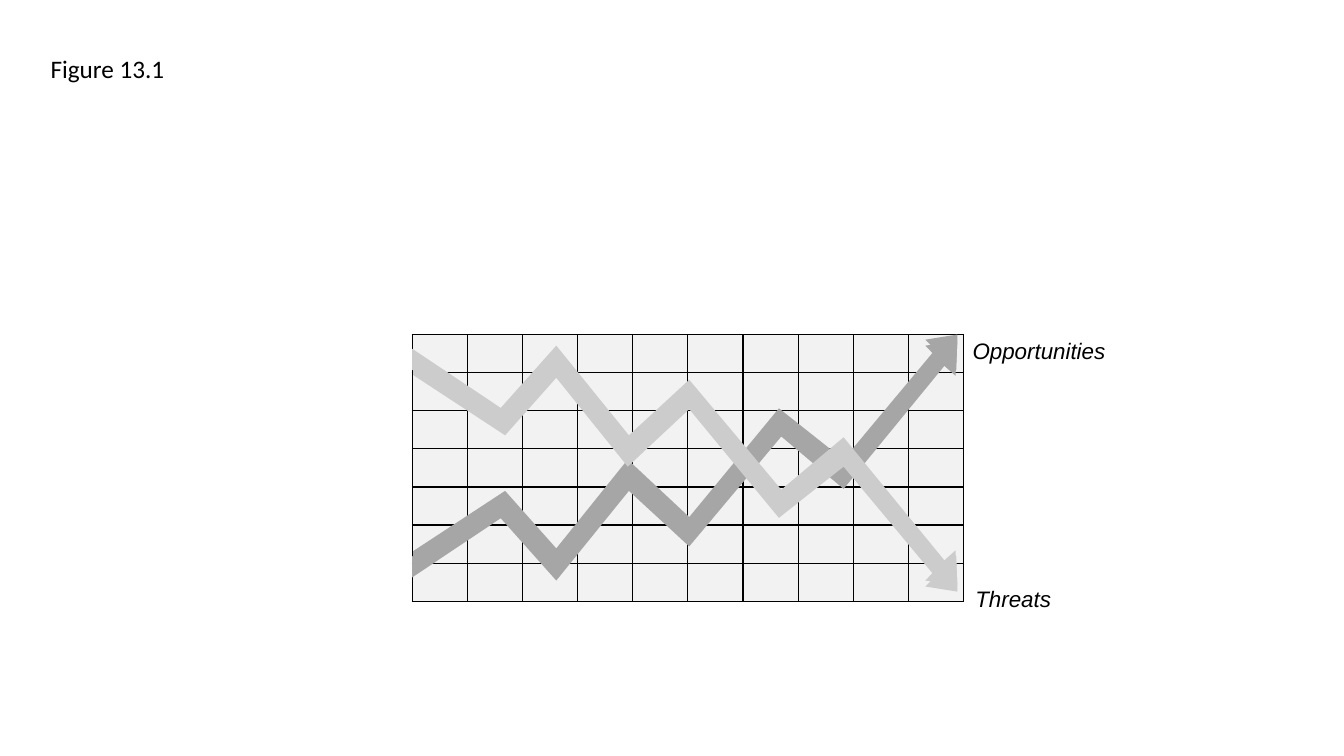
from lxml import etree
from pptx import Presentation
from pptx.dml.color import RGBColor
from pptx.enum.text import MSO_ANCHOR, MSO_AUTO_SIZE, PP_ALIGN
from pptx.oxml.ns import qn
from pptx.util import Cm, Pt

LEFT = PP_ALIGN.LEFT
TOP = MSO_ANCHOR.TOP
GROW = MSO_AUTO_SIZE.SHAPE_TO_FIT_TEXT

TITLE_ONLY = 5
BLACK, GRID_FILL = "000000", "F2F2F2"
OPPORTUNITY_GREY, THREAT_GREY = "A6A6A6", "CCCCCC"

GRID_LEFT, GRID_TOP = 10.39, 8.43
COLUMNS, COLUMN_WIDTH = 10, 1.39
ROWS, ROW_HEIGHT = 7, 0.96

# The threats mirror the opportunities: both heights add up to this sum
MIRROR_SUM = 23.34

# Outlines of the two overlapping rising arrows, in centimetres
RISING_ARROWS = [
    [(10.39, 14.02), (12.73, 12.5), (14.02, 13.97), (15.8, 11.76),
     (17.35, 13.18), (19.61, 10.41), (21.23, 11.76), (23.57, 8.97),
     (23.32, 8.71), (24.13, 8.59), (24.08, 9.47), (23.8, 9.22),
     (21.26, 12.32), (19.69, 11), (17.37, 13.77), (15.85, 12.37),
     (14.02, 14.63), (12.62, 13.06), (10.39, 14.55)],
    [(10.41, 13.89), (12.73, 12.37), (14.02, 13.82), (15.82, 11.58),
     (17.37, 13.03), (19.63, 10.29), (21.26, 11.58), (23.57, 8.81),
     (23.32, 8.56), (24.13, 8.43), (24.1, 9.32), (23.85, 9.07),
     (21.26, 12.17), (19.69, 10.85), (17.37, 13.64), (15.88, 12.24),
     (14.02, 14.5), (12.62, 12.9), (10.41, 14.4)],
]

LABEL_FORMAT = {"name": "Arial", "size": Pt(16), "italic": True}
TITLE_FORMAT = {"name": "Calibri", "size": Pt(18)}


def colour(hex_string):
    return RGBColor.from_string(hex_string)


def fill_solid(target, hex_string):
    target.fill.solid()
    target.fill.fore_color.rgb = colour(hex_string)


def write_text(box, text, font_format):
    frame = box.text_frame
    frame_format = {"word_wrap": False, "auto_size": GROW,
                    "vertical_anchor": TOP}
    for name, value in frame_format.items():
        setattr(frame, name, value)
    para = frame.paragraphs[0]
    para.alignment = LEFT
    span = para.add_run()
    span.text = text
    for name, value in font_format.items():
        setattr(span.font, name, value)
    span.font.color.rgb = colour(BLACK)


def place(box, left, top, width, height):
    box.left, box.top = Cm(left), Cm(top)
    box.width, box.height = Cm(width), Cm(height)


def add_label(page, text, left, top, width, height):
    box = page.shapes.add_textbox(Cm(left), Cm(top), Cm(width), Cm(height))
    write_text(box, text, LABEL_FORMAT)


def add_borders(cell):
    properties = cell._tc.get_or_add_tcPr()
    for side in ("a:lnL", "a:lnR", "a:lnT", "a:lnB"):
        line = etree.SubElement(properties, qn(side), w=str(Pt(1)))
        fill = etree.SubElement(line, qn("a:solidFill"))
        etree.SubElement(fill, qn("a:srgbClr"), val=BLACK)


def add_grid(page):
    frame = page.shapes.add_table(
        ROWS, COLUMNS, Cm(GRID_LEFT), Cm(GRID_TOP),
        Cm(COLUMNS * COLUMN_WIDTH), Cm(ROWS * ROW_HEIGHT))
    table = frame.table
    table.first_row = table.horz_banding = False
    for column in table.columns:
        column.width = Cm(COLUMN_WIDTH)
    for row in table.rows:
        row.height = Cm(ROW_HEIGHT)
    for cell in table.iter_cells():
        cell.margin_top = cell.margin_bottom = 0
        add_borders(cell)
        fill_solid(cell, GRID_FILL)


def add_arrows(page, outlines, hex_string):
    group = page.shapes.add_group_shape()
    for outline in outlines:
        points = [(Cm(x), Cm(y)) for x, y in outline]
        builder = group.shapes.build_freeform(*points[0])
        builder.add_line_segments(points[1:], close=True)
        arrow = builder.convert_to_shape()
        arrow.shadow.inherit = False
        fill_solid(arrow, hex_string)
        arrow.line.fill.background()


def main():
    deck = Presentation()
    deck.slide_width, deck.slide_height = Cm(33.87), Cm(19.05)
    page = deck.slides.add_slide(deck.slide_layouts[TITLE_ONLY])

    # Grid and rising arrows
    add_grid(page)
    add_arrows(page, RISING_ARROWS, OPPORTUNITY_GREY)

    # Labels at the arrow tips
    add_label(page, "Opportunities", 24.26, 8.36, 3.91, 0.94)
    add_label(page, "Threats", 24.33, 14.63, 2.44, 0.94)

    # Falling arrows
    falling_arrows = [[(x, MIRROR_SUM - y) for x, y in outline]
                      for outline in RISING_ARROWS]
    add_arrows(page, falling_arrows, THREAT_GREY)

    # Figure number
    title = page.shapes.title
    place(title, 1.02, 1.22, 3.4, 1.02)
    write_text(title, "Figure 13.1", TITLE_FORMAT)

    deck.save("out.pptx")


if __name__ == "__main__":
    main()
